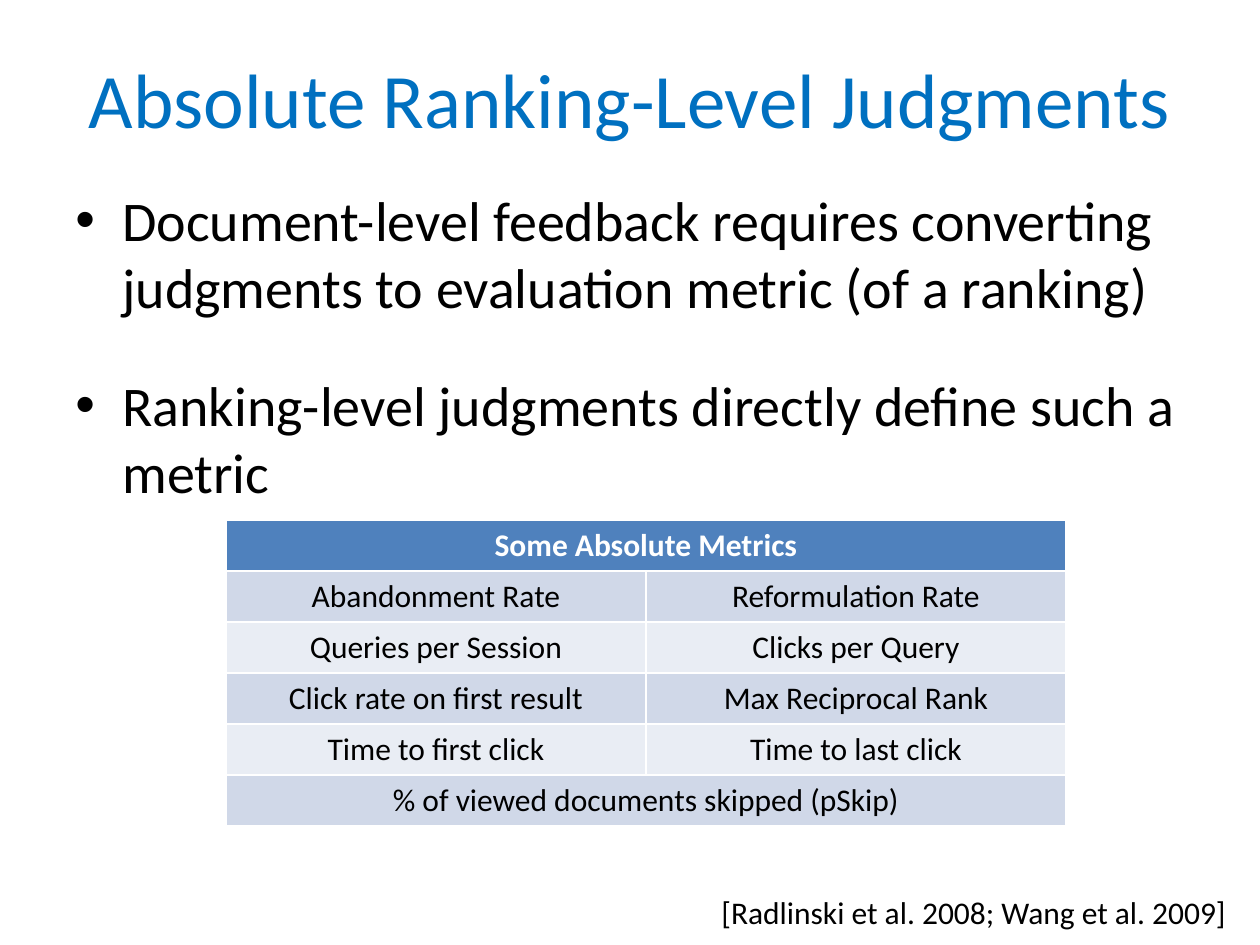
"""Build a slide on absolute ranking-level judgments with a table of metrics."""
from dataclasses import dataclass

import lxml.etree
import pptx
import pptx.dml.color
import pptx.enum.text
import pptx.oxml.ns
import pptx.util

SCALE = 914400 // 126
ALIGN = pptx.enum.text.PP_ALIGN
ANCHOR = pptx.enum.text.MSO_ANCHOR


@dataclass(frozen=True)
class Theme:
    font: str = "Calibri"
    title: str = "0070C0"
    ink: str = "000000"
    head: str = "4F81BD"
    light: str = "FFFFFF"
    bands: tuple[str, str] = ("D0D8E8", "E9EDF4")
    large: int = 44
    body: int = 32
    small: int = 18
    gap: int = 29


@dataclass(frozen=True)
class Box:
    left: int
    top: int
    width: int
    height: int

    def emu(self) -> tuple[int, ...]:
        """Return the sides in EMU."""
        return tuple(px(n) for n in (self.left, self.top, self.width, self.height))


@dataclass(frozen=True)
class Row:
    cells: tuple[str, ...]
    fill: str
    ink: str = "000000"
    bold: bool = False


THEME = Theme()
TITLE = Box(63, 38, 1134, 120)
BODY = Box(63, 179, 1134, 665)
GRID = Box(226, 520, 840, 306)
CITE = Box(709, 887, 536, 50)
INDENT = 47
POINTS = (
    "Document-level feedback requires converting judgments to evaluation metric (of a ranking)",
    "Ranking-level judgments directly define such a metric",
)
METRICS = (
    ("Abandonment Rate", "Reformulation Rate"),
    ("Queries per Session", "Clicks per Query"),
    ("Click rate on first result", "Max Reciprocal Rank"),
    ("Time to first click", "Time to last click"),
    ("% of viewed documents skipped (pSkip)",),
)


def px(count: int) -> int:
    """Turn px into EMU."""
    return pptx.util.Emu(count * SCALE)


def rgb(code: str) -> pptx.dml.color.RGBColor:
    """Turn a hex code into a colour."""
    return pptx.dml.color.RGBColor.from_string(code)


def style(frame, size: int, ink: str, align=ALIGN.LEFT, bold: bool = False) -> None:
    """Format every run of a text frame."""
    for para in frame.paragraphs:
        para.alignment = align
        for run in para.runs:
            run.font.name = THEME.font
            run.font.size = pptx.util.Pt(size)
            run.font.bold = bold
            run.font.color.rgb = rgb(ink)


def bullet(para) -> None:
    """Give a paragraph a hanging bullet."""
    props = para._p.get_or_add_pPr()
    props.set("marL", str(px(INDENT)))
    props.set("indent", str(-px(INDENT)))
    qn = pptx.oxml.ns.qn
    lxml.etree.SubElement(props, qn("a:buFont")).set("typeface", "Arial")
    lxml.etree.SubElement(props, qn("a:buChar")).set("char", "•")


def draw_title(slide, text: str) -> None:
    """Fill and place the title."""
    title = slide.shapes.title
    title.left, title.top, title.width, title.height = TITLE.emu()
    title.text_frame.text = text
    title.text_frame.vertical_anchor = ANCHOR.MIDDLE
    style(title.text_frame, THEME.large, THEME.title, ALIGN.CENTER)


def draw_text(slide, box: Box, text: str, size: int, wrap: bool):
    """Add a text box and return its frame."""
    frame = slide.shapes.add_textbox(*box.emu()).text_frame
    frame.word_wrap = wrap
    frame.text = text
    style(frame, size, THEME.ink)
    return frame


def draw_points(slide, points: tuple[str, ...]) -> None:
    """Add the bulleted text."""
    frame = draw_text(slide, BODY, "\n".join(points), THEME.body, True)
    for order, para in enumerate(frame.paragraphs):
        para.space_before = pptx.util.Pt(THEME.gap if order else 0)
        bullet(para)


def draw_grid(slide, rows: list[Row]) -> None:
    """Add the table, with lone cells spanning both columns."""
    grid = slide.shapes.add_table(len(rows), 2, *GRID.emu()).table
    for down, row in enumerate(rows):
        for across in range(2):
            cell = grid.cell(down, across)
            cell.fill.solid()
            cell.fill.fore_color.rgb = rgb(row.fill)
        if len(row.cells) == 1:
            grid.cell(down, 0).merge(grid.cell(down, 1))
        for across, text in enumerate(row.cells):
            frame = grid.cell(down, across).text_frame
            frame.text = text
            style(frame, THEME.small, row.ink, ALIGN.CENTER, row.bold)


def main() -> None:
    """Build and save the deck."""
    deck = pptx.Presentation()
    deck.slide_width, deck.slide_height = px(1260), px(945)
    slide = deck.slides.add_slide(deck.slide_layouts[5])
    draw_title(slide, "Absolute Ranking-Level Judgments")
    draw_points(slide, POINTS)
    rows = [Row(("Some Absolute Metrics",), THEME.head, THEME.light, True)]
    rows += [Row(pair, THEME.bands[n % 2], THEME.ink) for n, pair in enumerate(METRICS)]
    draw_grid(slide, rows)
    draw_text(slide, CITE, "[Radlinski et al. 2008; Wang et al. 2009]", THEME.small, False)
    deck.save("out.pptx")


if __name__ == "__main__":
    main()
